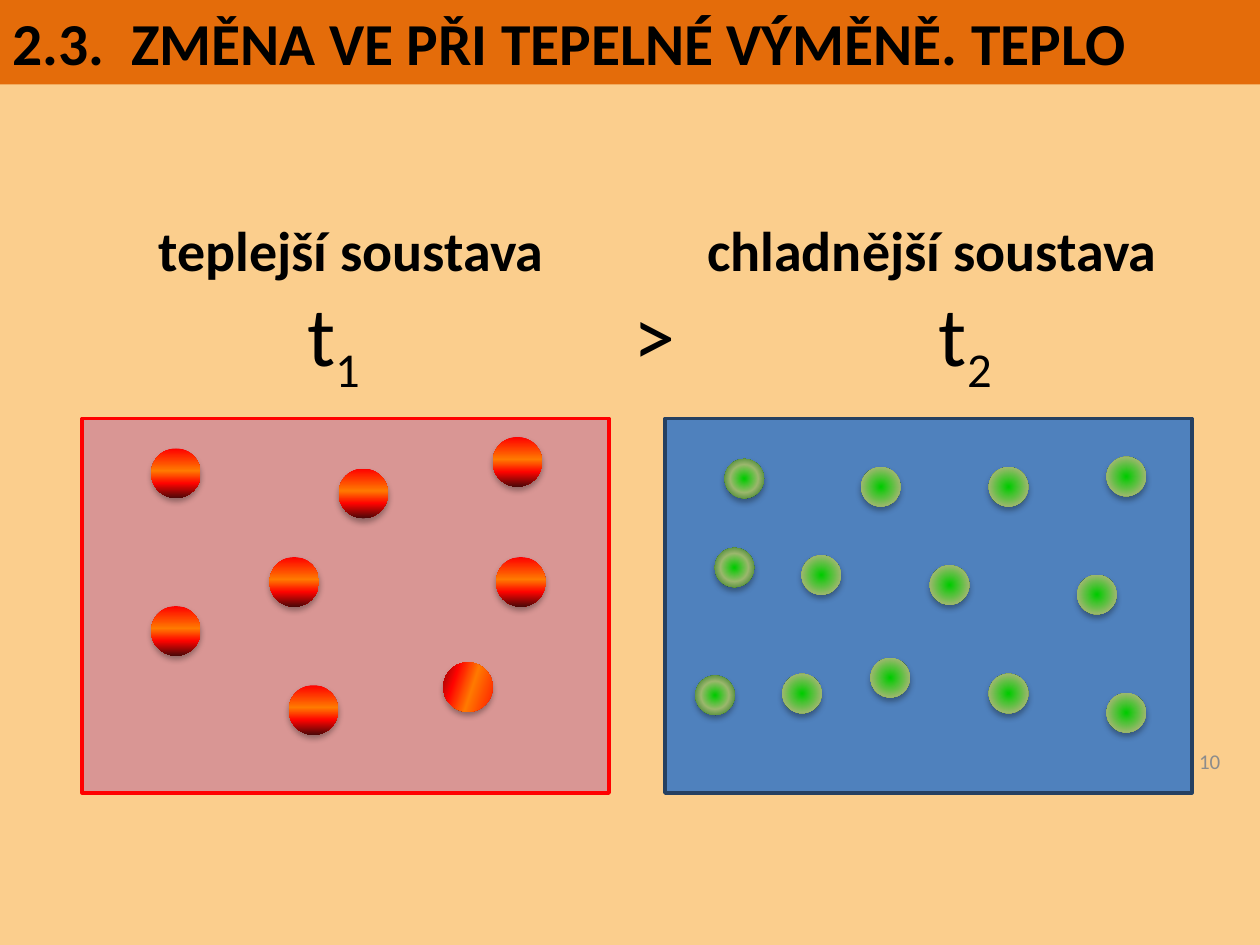
from lxml import etree
from pptx import Presentation
from pptx.dml.color import RGBColor
from pptx.enum import shapes, text
from pptx.oxml import parse_xml
from pptx.oxml.ns import nsdecls, qn
from pptx.util import Pt

BLACK = RGBColor(0x00, 0x00, 0x00)
GRAY = RGBColor(0x8C, 0x8C, 0x8C)
CREAM = RGBColor(0xFB, 0xCE, 0x8D)
ORANGE = RGBColor(0xE4, 0x6C, 0x0A)
BLUE = RGBColor(0x4F, 0x81, 0xBD)
NAVY = RGBColor(0x25, 0x40, 0x61)
PINK = RGBColor(0xD9, 0x96, 0x94)
RED = RGBColor(0xFF, 0x00, 0x00)
BRIGHT_ORANGE = RGBColor(0xFF, 0x7A, 0x00)
SCARLET = RGBColor(0xFF, 0x03, 0x00)
MAROON = RGBColor(0x4D, 0x08, 0x08)
GREEN = RGBColor(0x00, 0xCC, 0x00)
SAGE = RGBColor(0x9C, 0xB8, 0x6E)
DARK_GREEN = RGBColor(0x15, 0x6B, 0x13)


def write(paragraph, content, size=48, bold=False, color=BLACK, baseline=0):
    run = paragraph.add_run()
    run.text = content
    run.font.name = "Calibri"
    run.font.size = Pt(size)
    run.font.bold = bold
    run.font.color.rgb = color
    if baseline:
        run.font._element.set("baseline", str(baseline * 1000))


def set_tabs(paragraph, stops):
    tab_list = etree.SubElement(paragraph._p.get_or_add_pPr(), qn("a:tabLst"))
    for position, alignment in stops:
        etree.SubElement(tab_list, qn("a:tab"), pos=str(Pt(position)), algn=alignment)


presentation = Presentation()
presentation.slide_width, presentation.slide_height = Pt(720), Pt(540)
slide = presentation.slides.add_slide(presentation.slide_layouts[5])
slide.background.fill.solid()
slide.background.fill.fore_color.rgb = CREAM

title = slide.shapes.title
title.left, title.top, title.width, title.height = Pt(0), Pt(0), Pt(720), Pt(48.3)
title.fill.solid()
title.fill.fore_color.rgb = ORANGE
title.text_frame.auto_size = text.MSO_AUTO_SIZE.NONE
title.text_frame.vertical_anchor = text.MSO_ANCHOR.TOP
heading = title.text_frame.paragraphs[0]
heading.alignment = text.PP_ALIGN.LEFT
write(heading, "2.3.  ZMĚNA VE PŘI TEPELNÉ VÝMĚNĚ. TEPLO", size=34, bold=True)

for left, fill_color, line_color in ((380, BLUE, NAVY), (47, PINK, RED)):
    panel = slide.shapes.add_shape(
        shapes.MSO_SHAPE.RECTANGLE, Pt(left), Pt(239.2), Pt(301), Pt(214))
    panel.shadow.inherit = False
    panel.fill.solid()
    panel.fill.fore_color.rgb = fill_color
    panel.line.color.rgb = line_color
    panel.line.width = Pt(2)

labels = slide.shapes.add_textbox(Pt(16.6), Pt(119.5), Pt(703.4), Pt(104.4)).text_frame
labels.word_wrap = True
names = labels.paragraphs[0]
set_tabs(names, ((177, "ctr"), (338.5, "l"), (509, "ctr")))
write(names, "\tteplejší soustava\t\tchladnější soustava", size=32, bold=True)
temperatures = labels.add_paragraph()
set_tabs(temperatures, ((170, "ctr"), (338.5, "l"), (502, "l")))
for content, baseline in (("\tt", 0), ("1 \t", -25), (">\t t", 0), ("2", -25)):
    write(temperatures, content, baseline=baseline)

number = slide.shapes.add_textbox(Pt(536.4), Pt(420.5), Pt(168), Pt(28.8)).text_frame
number.word_wrap = True
number.vertical_anchor = text.MSO_ANCHOR.MIDDLE
number.paragraphs[0].alignment = text.PP_ALIGN.RIGHT
write(number.paragraphs[0], "10", size=12, color=GRAY)

hot_stops = ((0, RED), (45, BRIGHT_ORANGE), (70, SCARLET), (100, MAROON))
cold_stops = ((0, GREEN), (50, SAGE), (100, DARK_GREEN))
linear = '<a:lin ang="5400000" scaled="0"/>'
radial = ('<a:path path="circle">'
          '<a:fillToRect l="50000" t="50000" r="50000" b="50000"/></a:path>')
hot = ((281.5, 249.8), (193.5, 267.8), (86.4, 346.4), (86.4, 256.3),
       (283.5, 318.4), (154, 318.4), (165, 391.6))
hot_turned = ((253.3, 378.5),)
cold = ((414, 262.2), (397.3, 386), (408.4, 313))
cold_turned = ((565, 266.9), (492, 266.9), (497.4, 376), (632.3, 396), (632.3, 261),
               (615.5, 328.5), (565, 385), (531.3, 323), (447, 385), (458, 317.3))

for positions, size, rotation, stops, direction in (
        (hot, 28.3, 0, hot_stops, linear),
        (hot_turned, 28.3, 108.6, hot_stops, linear),
        (cold, 22.6, 0, cold_stops, radial),
        (cold_turned, 22.6, 52.5, cold_stops, radial)):
    stop_xml = "".join(
        f'<a:gs pos="{position * 1000}"><a:srgbClr val="{color}"/></a:gs>'
        for position, color in stops)
    for left, top in positions:
        particle = slide.shapes.add_shape(
            shapes.MSO_SHAPE.OVAL, Pt(left), Pt(top), Pt(size), Pt(size))
        particle.rotation = rotation
        properties = particle._element.spPr
        properties.append(parse_xml(
            f'<a:gradFill {nsdecls("a")} rotWithShape="1">'
            f'<a:gsLst>{stop_xml}</a:gsLst>{direction}</a:gradFill>'))
        particle.line.fill.background()
        properties.append(parse_xml(
            f'<a:effectLst {nsdecls("a")}><a:outerShdw blurRad="{Pt(3.5)}" '
            f'dist="{Pt(2.2)}" dir="5400000" rotWithShape="0"><a:srgbClr val="{BLACK}">'
            '<a:alpha val="32000"/></a:srgbClr></a:outerShdw></a:effectLst>'))

presentation.save("out.pptx")
